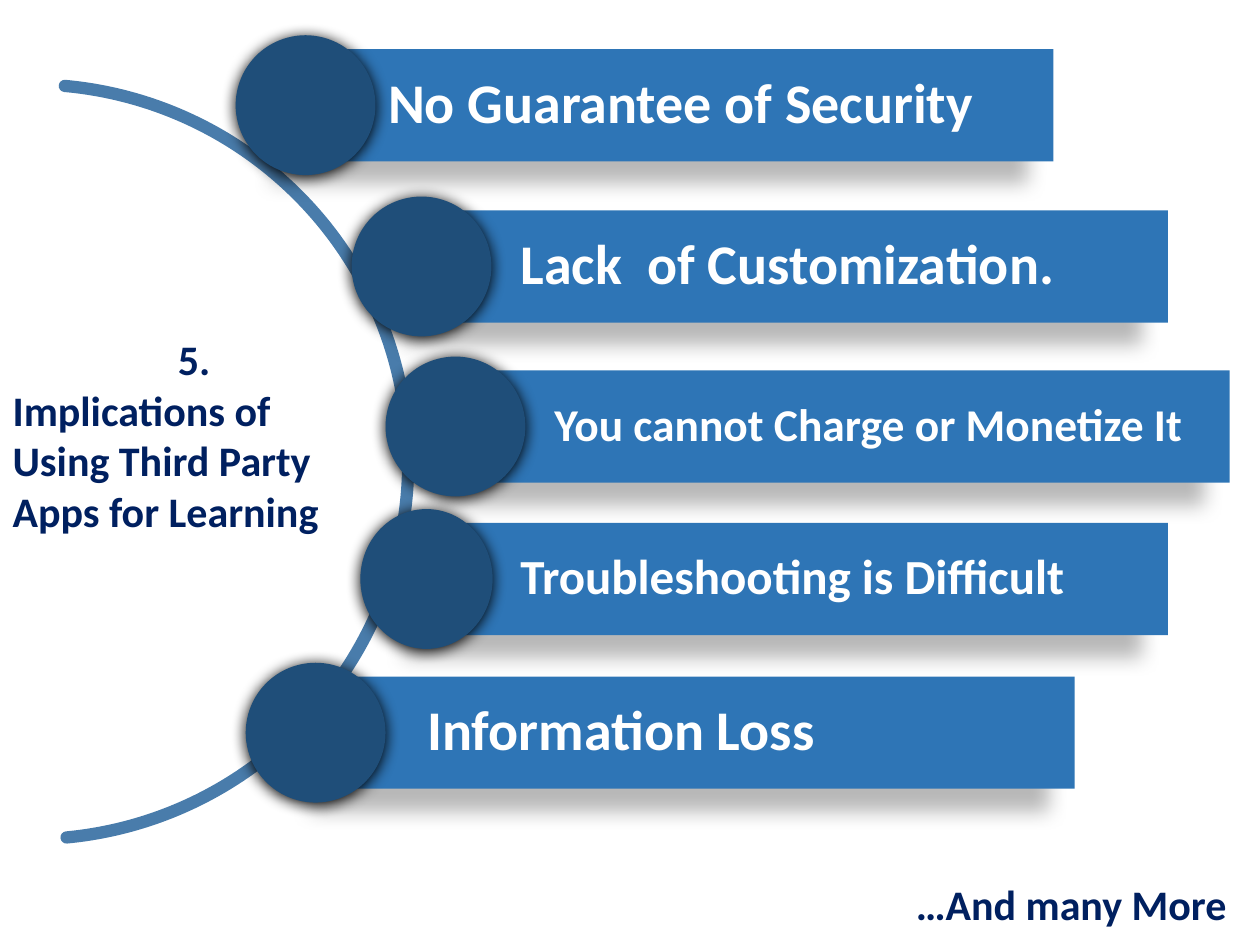
import pptx
import pptx.util
import pptx.dml.color
import pptx.enum.shapes
import pptx.enum.text
import pptx.oxml
import pptx.oxml.ns

Inches, Pt = pptx.util.Inches, pptx.util.Pt
RGBColor = pptx.dml.color.RGBColor
SHAPE = pptx.enum.shapes.MSO_SHAPE
ALIGN = pptx.enum.text.PP_ALIGN
ANCHOR = pptx.enum.text.MSO_ANCHOR

NAVY = RGBColor(0x00, 0x20, 0x60)
ARC_BLUE = RGBColor(0x49, 0x7C, 0xAB)
BAR_BLUE = RGBColor(0x2E, 0x75, 0xB6)
DOT_BLUE = RGBColor(0x1F, 0x4E, 0x79)
WHITE = RGBColor(0xFF, 0xFF, 0xFF)
FONT = "Calibri"

# Content
TITLE = [
    ("5.", ALIGN.CENTER),
    ("Implications of Using Third Party Apps for Learning", ALIGN.LEFT),
]
CLOSING = "…And many More"
# text, font size, bar left, bar top, bar width, dot left, dot width
IMPLICATIONS = [
    ("No Guarantee of Security", 32, 2.37, 0.39, 5.99, 1.87, 1.11),
    ("Lack  of Customization.", 32, 3.42, 1.67, 5.85, 2.79, 1.11),
    ("You cannot Charge or Monetize It", 26, 3.69, 2.94, 6.07, 3.06, 1.11),
    ("Troubleshooting is Difficult", 28, 3.42, 4.15, 5.85, 2.86, 1.05),
    ("Information Loss", 32, 2.68, 5.37, 5.85, 1.95, 1.11),
]
BAR_HEIGHT, DOT_HEIGHT = 0.89, 1.11

# Shadows: opacity in percent, blur and distance in points, direction in degrees
BAR_SHADOW = (28, 11.8, 19.7, 141)
DOT_SHADOW = (100, 8.5, 1, 90)


def add_run(paragraph, text, size, color):
    run = paragraph.add_run()
    run.text = text
    run.font.name = FONT
    run.font.size = Pt(size)
    run.font.bold = True
    run.font.color.rgb = color


def add_shadow(shape, opacity, blur, distance, direction):
    shape.shadow.inherit = False
    effects = shape._element.spPr.find(pptx.oxml.ns.qn("a:effectLst"))
    effects.append(pptx.oxml.parse_xml(
        f'<a:outerShdw {pptx.oxml.ns.nsdecls("a")} blurRad="{Pt(blur)}" '
        f'dist="{Pt(distance)}" dir="{direction * 60000}" algn="ctr" rotWithShape="0">'
        f'<a:srgbClr val="000000"><a:alpha val="{opacity * 1000}"/></a:srgbClr>'
        '</a:outerShdw>'))


def add_filled(slide, kind, box, color, shadow):
    shape = slide.shapes.add_shape(kind, *map(Inches, box))
    shape.fill.solid()
    shape.fill.fore_color.rgb = color
    shape.line.fill.background()
    add_shadow(shape, *shadow)
    return shape


def add_implication(slide, text, size, left, top, width, dot_left, dot_width):
    bar = add_filled(slide, SHAPE.RECTANGLE, (left, top, width, BAR_HEIGHT),
                     BAR_BLUE, BAR_SHADOW)
    frame = bar.text_frame
    frame.word_wrap = True
    frame.vertical_anchor = ANCHOR.MIDDLE
    frame.margin_left = Inches(0.71)
    frame.margin_top = frame.margin_right = frame.margin_bottom = Inches(0.12)
    paragraph = frame.paragraphs[0]
    paragraph.alignment = ALIGN.LEFT
    paragraph.line_spacing = 0.9
    add_run(paragraph, text, size, WHITE)

    # The dot is centred on the height of its bar
    dot_top = top + (BAR_HEIGHT - DOT_HEIGHT) / 2
    add_filled(slide, SHAPE.OVAL, (dot_left, dot_top, dot_width, DOT_HEIGHT),
               DOT_BLUE, DOT_SHADOW)


def main():
    presentation = pptx.Presentation()
    presentation.slide_width, presentation.slide_height = Inches(10), Inches(7.5)
    slide = presentation.slides.add_slide(presentation.slide_layouts[5])

    # Title beside the arc
    title = slide.shapes.title
    title.left, title.top, title.width, title.height = map(Inches, (0, 2.6, 3.08, 1.72))
    frame = title.text_frame
    frame.auto_size = pptx.enum.text.MSO_AUTO_SIZE.NONE
    frame.vertical_anchor = ANCHOR.TOP
    for index, (text, alignment) in enumerate(TITLE):
        paragraph = frame.add_paragraph() if index else frame.paragraphs[0]
        paragraph.alignment = alignment
        add_run(paragraph, text, 24, NAVY)

    # Arc that carries the dots
    arc = slide.shapes.add_shape(SHAPE.BLOCK_ARC, *map(Inches, (-2.75, 0.67, 5.99, 5.99)))
    for index, value in enumerate((165.1, 50.74, 0)):
        arc.adjustments[index] = value
    arc.shadow.inherit = False
    arc.fill.background()
    arc.line.color.rgb = ARC_BLUE
    arc.line.width = Pt(7)

    # Bars with their dots
    for implication in IMPLICATIONS:
        add_implication(slide, *implication)

    # Closing remark
    closing = slide.shapes.add_textbox(*map(Inches, (7.17, 6.92, 2.83, 0.5)))
    closing.text_frame.word_wrap = True
    add_run(closing.text_frame.paragraphs[0], CLOSING, 24, NAVY)

    presentation.save("out.pptx")


if __name__ == "__main__":
    main()
